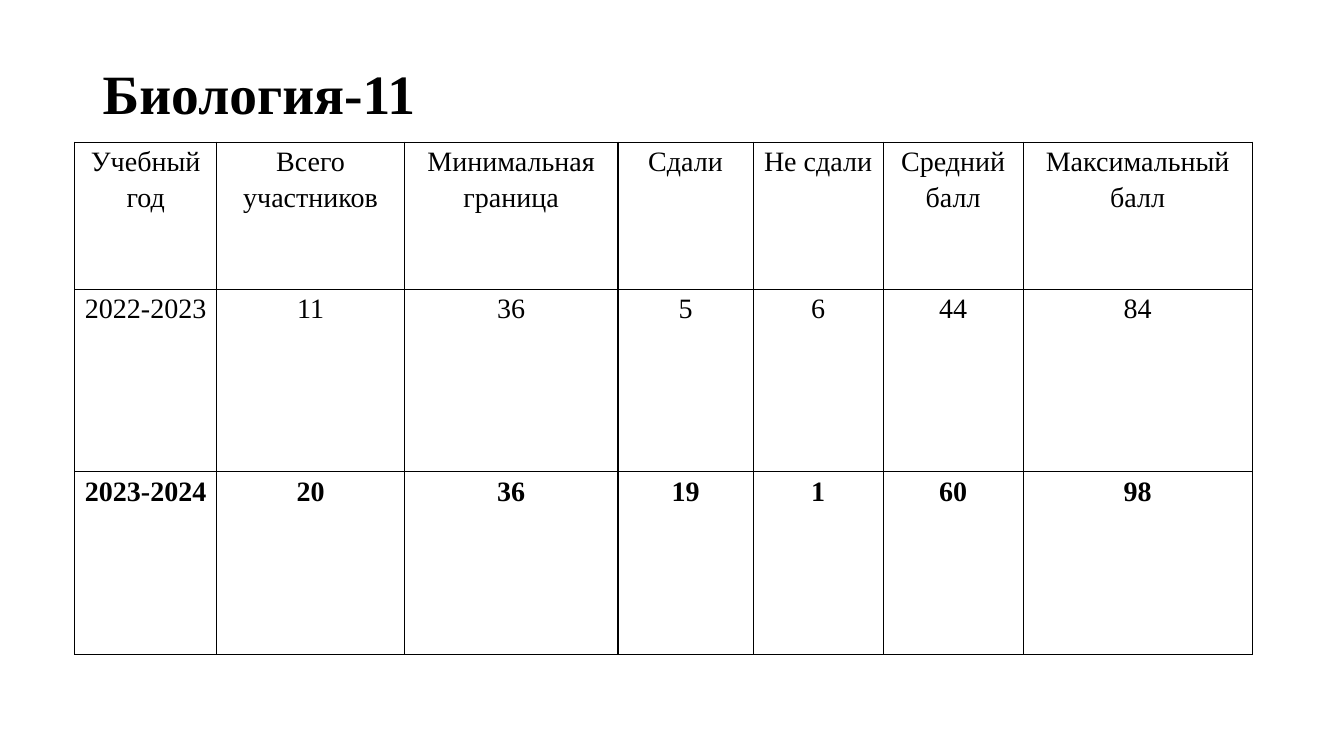
"""Build the biology exam results slide."""
import dataclasses

import lxml.etree
import pptx
import pptx.dml.color
import pptx.enum.text
import pptx.oxml.ns
import pptx.slide
import pptx.table
import pptx.text.text
import pptx.util

EMU_PER_PX = 9144
FONT = "Times New Roman"
BLACK = pptx.dml.color.RGBColor(0x00, 0x00, 0x00)
WHITE = pptx.dml.color.RGBColor(0xFF, 0xFF, 0xFF)
BORDER_SIDES = ("a:lnL", "a:lnR", "a:lnT", "a:lnB")
CELL_INSET = 7


@dataclasses.dataclass(frozen=True)
class Column:
    heading: str
    width: int


@dataclasses.dataclass(frozen=True)
class Row:
    values: tuple[str, ...]
    height: int
    bold: bool = False


COLUMNS = (
    Column("Учебный год", 141),
    Column("Всего участников", 186),
    Column("Минимальная граница", 212),
    Column("Сдали", 134),
    Column("Не сдали", 129),
    Column("Средний балл", 139),
    Column("Максимальный балл", 227),
)
ROWS = (
    Row(tuple(column.heading for column in COLUMNS), 146),
    Row(("2022-2023", "11", "36", "5", "6", "44", "84"), 181),
    Row(("2023-2024", "20", "36", "19", "1", "60", "98"), 181, bold=True),
)


def px(length: int) -> pptx.util.Emu:
    """Convert slide pixels to EMU."""
    return pptx.util.Emu(length * EMU_PER_PX)


def write(frame: pptx.text.text.TextFrame, text: str, size: float, bold: bool,
          alignment: pptx.enum.text.PP_ALIGN) -> None:
    """Fill a text frame with one styled paragraph."""
    para = frame.paragraphs[0]
    para.alignment = alignment
    para.line_spacing = 1.15
    span = para.add_run()
    span.text = text
    span.font.name = FONT
    span.font.size = pptx.util.Pt(size)
    span.font.bold = bold
    span.font.color.rgb = BLACK


def add_borders(cell: pptx.table._Cell) -> None:
    """Draw a thin black line on every side of a cell."""
    properties = cell._tc.get_or_add_tcPr()
    qn = pptx.oxml.ns.qn
    for side in BORDER_SIDES:
        line = lxml.etree.SubElement(properties, qn(side), w=str(pptx.util.Pt(1)))
        fill = lxml.etree.SubElement(line, qn("a:solidFill"))
        lxml.etree.SubElement(fill, qn("a:srgbClr"), val=str(BLACK))


def add_title(page: pptx.slide.Slide) -> None:
    """Place the slide heading."""
    box = page.shapes.add_textbox(px(92), px(40), px(1150), px(145))
    frame = box.text_frame
    frame.word_wrap = True
    frame.margin_top = px(9)
    frame.vertical_anchor = pptx.enum.text.MSO_ANCHOR.TOP
    write(frame, "Биология-11", 39.6, True, pptx.enum.text.PP_ALIGN.LEFT)


def add_results(page: pptx.slide.Slide) -> None:
    """Place the table of results by school year."""
    width = sum(column.width for column in COLUMNS)
    height = sum(row.height for row in ROWS)
    table = page.shapes.add_table(
        len(ROWS), len(COLUMNS), px(74), px(141), px(width), px(height)).table
    table.first_row = False
    table.horz_banding = False
    for index, column in enumerate(COLUMNS):
        table.columns[index].width = px(column.width)
    for row_index, row in enumerate(ROWS):
        table.rows[row_index].height = px(row.height)
        for column_index, value in enumerate(row.values):
            cell = table.cell(row_index, column_index)
            cell.margin_left = cell.margin_right = px(CELL_INSET)
            cell.margin_top = cell.margin_bottom = 0
            add_borders(cell)
            cell.fill.solid()
            cell.fill.fore_color.rgb = WHITE
            write(cell.text_frame, value, 20, row.bold, pptx.enum.text.PP_ALIGN.CENTER)


def main() -> None:
    """Build and save the deck."""
    deck = pptx.Presentation()
    deck.slide_width, deck.slide_height = px(1333), px(750)
    page = deck.slides.add_slide(deck.slide_layouts[6])
    add_title(page)
    add_results(page)
    deck.save("out.pptx")


if __name__ == "__main__":
    main()
